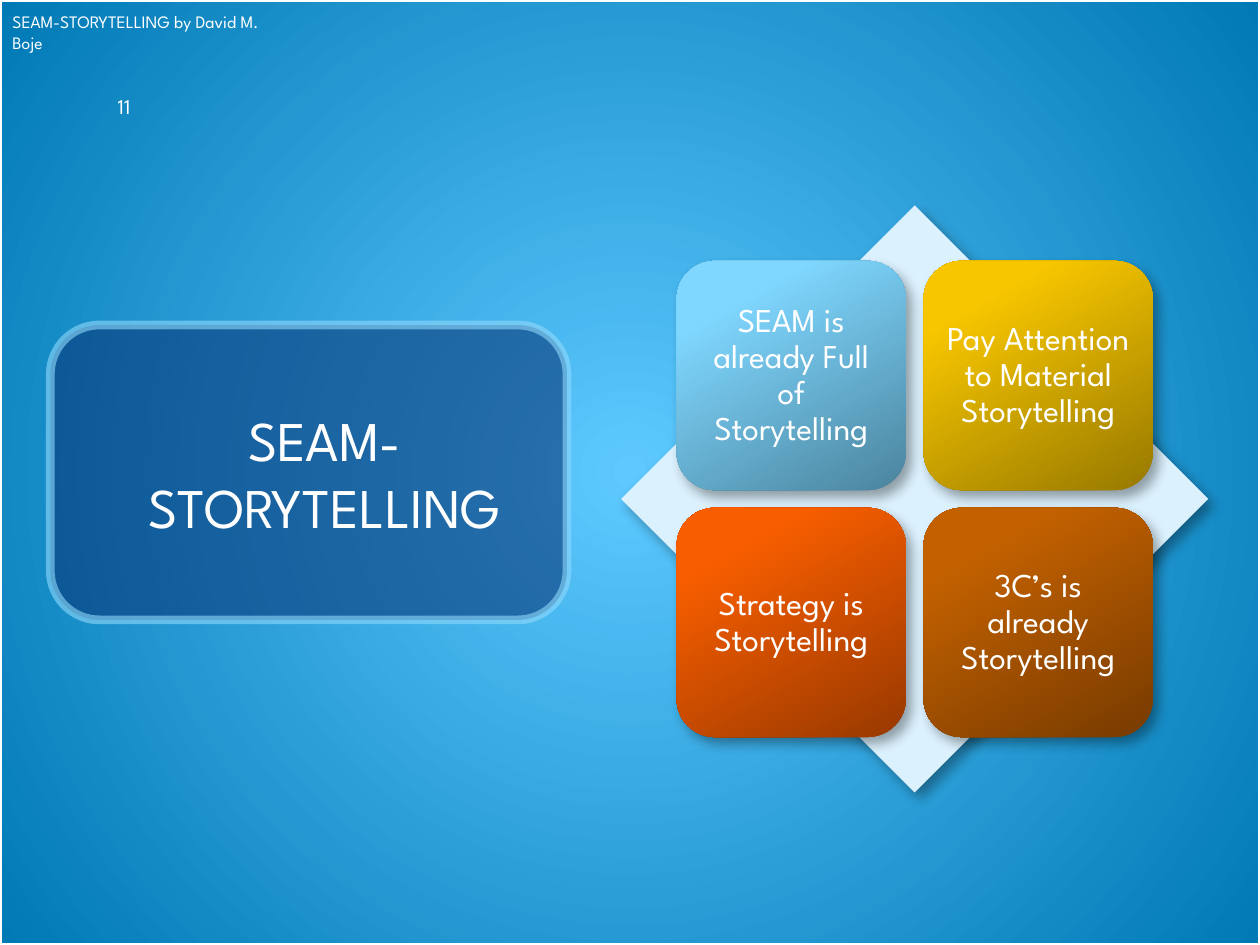
from lxml import etree
from pptx import Presentation
from pptx.dml.color import RGBColor
from pptx.enum.shapes import MSO_SHAPE
from pptx.enum.text import MSO_ANCHOR, PP_ALIGN
from pptx.oxml import parse_xml
from pptx.oxml.ns import qn
from pptx.util import Inches, Pt

RECT, ROUND, DIAMOND = MSO_SHAPE.RECTANGLE, MSO_SHAPE.ROUNDED_RECTANGLE, MSO_SHAPE.DIAMOND
MIDDLE, BOTTOM = MSO_ANCHOR.MIDDLE, MSO_ANCHOR.BOTTOM
LEFT, CENTER = PP_ALIGN.LEFT, PP_ALIGN.CENTER
NS = 'xmlns:a="http://schemas.openxmlformats.org/drawingml/2006/main"'
FONT = "League Spartan"
WHITE = "FFFFFF"
SIDE, STEP = 1.82, 1.96
TILES = [
    ("SEAM is already Full of Storytelling", ("4B849E", "7FD7FF", "81D7FF")),
    ("Pay Attention to Material Storytelling", ("977900", "F7C600", "F8C700")),
    ("Strategy is Storytelling", ("983900", "F85E00", "F95E00")),
    ("3C’s is already Storytelling", ("773B00", "C36100", "C46100")),
]


def color(code):
    """Turn a hex string into a colour."""
    return RGBColor.from_string(code)


def put(target, values):
    """Set each attribute named in a dict."""
    for name, value in values.items():
        setattr(target, name, value)


def blend(fill, stops, way):
    """Give a fill gradient stops and a direction element."""
    fill.gradient()
    grad = fill._fill._gradFill
    for child in list(grad):
        grad.remove(child)
    marks = "".join(
        f'<a:gs pos="{pos * 1000}"><a:srgbClr val="{code}"/></a:gs>' for pos, code in stops
    )
    grad.append(parse_xml(f"<a:gsLst {NS}>{marks}</a:gsLst>"))
    grad.append(parse_xml(way))


def fade(fill, alpha):
    """Make a solid fill partly clear."""
    tone = fill._xPr.find(qn("a:solidFill"))[0]
    etree.SubElement(tone, qn("a:alpha"), val=str(alpha * 1000))


def shade(shape):
    """Give a shape a soft shadow to the lower right."""
    shape._element.spPr.find(qn("a:effectLst")).append(parse_xml(
        f'<a:outerShdw {NS} blurRad="{Pt(7)}" dist="{Pt(5)}" dir="3000000" rotWithShape="0">'
        '<a:srgbClr val="000000"><a:alpha val="35000"/></a:srgbClr></a:outerShdw>'
    ))


def form(slide, kind, box, fill=None, line=None, width=0):
    """Add a preset shape with a flat fill and line."""
    shape = slide.shapes.add_shape(kind, *map(Inches, box))
    shape.shadow.inherit = False
    if fill:
        shape.fill.solid()
        shape.fill.fore_color.rgb = color(fill)
    else:
        shape.fill.background()
    if line:
        shape.line.color.rgb = color(line)
        shape.line.width = Pt(width)
    else:
        shape.line.fill.background()
    return shape


def write(shape, text, size, align=CENTER, anchor=MIDDLE, inset=None, space=None):
    """Fill a shape with one white paragraph."""
    frame = shape.text_frame
    put(frame, {"word_wrap": True, "vertical_anchor": anchor})
    if inset:
        sides = ("left", "top", "right", "bottom")
        put(frame, {f"margin_{side}": Inches(inset) for side in sides})
    para = frame.paragraphs[0]
    put(para, {"alignment": align, "line_spacing": space})
    run = para.add_run()
    run.text = text
    put(run.font, {"name": FONT, "size": Pt(size)})
    run.font.color.rgb = color(WHITE)


def label(slide, box, text, size, **format):
    """Add a text box."""
    write(slide.shapes.add_textbox(*map(Inches, box)), text, size, **format)


def tile(slide, spot, text, tones):
    """Add one tile of the two by two grid."""
    row, col = divmod(spot, 2)
    box = (5.37 + col * STEP, 2.07 + row * STEP, SIDE, SIDE)
    shape = form(slide, ROUND, box)
    blend(shape.fill, zip((0, 80, 100), tones), f'<a:lin {NS} ang="14400000" scaled="0"/>')
    shade(shape)
    write(shape, text, 19, inset=0.08, space=0.9)


def main():
    """Build and save the slide."""
    deck = Presentation()
    put(deck, {"slide_width": Inches(10), "slide_height": Inches(7.5)})
    slide = deck.slides.add_slide(deck.slide_layouts[6])
    blend(
        slide.background.fill,
        [(0, "5DC9FF"), (100, "0079B5")],
        f'<a:path {NS} path="circle">'
        '<a:fillToRect l="50000" t="50000" r="50000" b="50000"/></a:path>',
    )
    form(slide, RECT, (0, 0, 10, 7.5), line=WHITE, width=2)
    panel = form(slide, ROUND, (0.4, 2.58, 4.1, 2.34), "073779", "8FD9FB", 5)
    fade(panel.fill, 60)
    fade(panel.line.fill, 60)
    label(slide, (0.58, 2.75, 4, 2), "SEAM-STORYTELLING", 32)
    shade(form(slide, DIAMOND, (4.93, 1.63, 4.66, 4.66), "DBF1FD"))
    for spot, (text, tones) in enumerate(TILES):
        tile(slide, spot, text, tones)
    label(slide, (0, 0, 2.25, 0.47), "SEAM-STORYTELLING by David M. Boje", 10,
          align=LEFT, anchor=BOTTOM, space=Pt(12))
    label(slide, (0.16, 0.72, 1.65, 0.25), "11", 12)
    deck.save("out.pptx")


if __name__ == "__main__":
    main()
